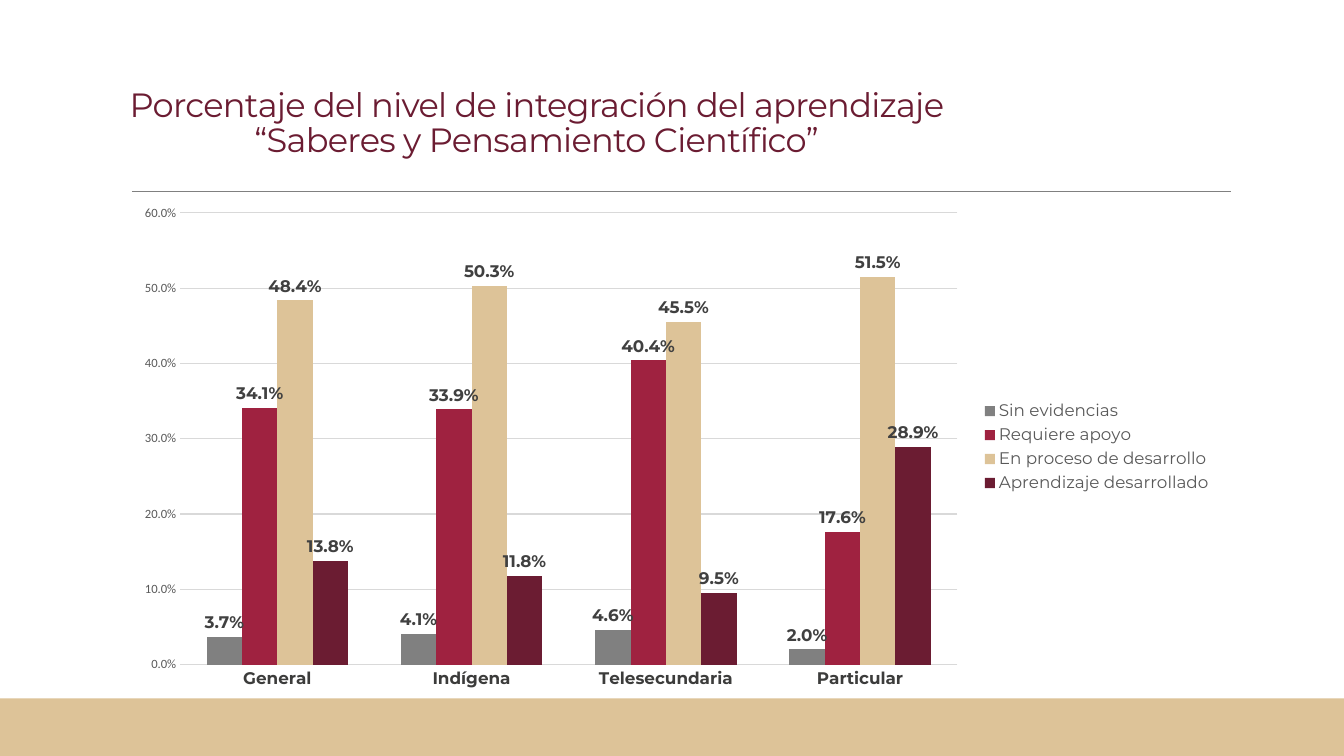
"""Build the slide on learning integration levels by school type."""
from lxml import etree
from pptx import Presentation
from pptx.chart.data import CategoryChartData
from pptx.dml.color import RGBColor
from pptx.enum.chart import XL_CHART_TYPE as ChartType
from pptx.enum.chart import XL_LABEL_POSITION as LabelPosition
from pptx.enum.chart import XL_LEGEND_POSITION as LegendPosition
from pptx.enum.chart import XL_TICK_MARK as TickMark
from pptx.enum.shapes import MSO_CONNECTOR as Connector
from pptx.enum.shapes import MSO_SHAPE as Shape
from pptx.enum.text import MSO_ANCHOR as Anchor
from pptx.enum.text import MSO_AUTO_SIZE as AutoSize
from pptx.enum.text import PP_ALIGN as Align
from pptx.oxml.ns import qn
from pptx.util import Pt

COLORS = {
    "gray": "808080",
    "red": "9F2240",
    "sand": "DDC398",
    "wine": "6B1C32",
    "grid": "D9D9D9",
    "muted": "595959",
    "label": "404040",
    "category": "3C3C3B",
}
SERIES = [
    ("Sin evidencias", "gray", (0.037, 0.041, 0.046, 0.02)),
    ("Requiere apoyo", "red", (0.341, 0.339, 0.404, 0.176)),
    ("En proceso de desarrollo", "sand", (0.484, 0.503, 0.455, 0.515)),
    ("Aprendizaje desarrollado", "wine", (0.138, 0.118, 0.095, 0.289)),
]
PERCENT = "0.0%"


def color(name):
    return RGBColor.from_string(COLORS[name])


def format_font(font, color_name, **values):
    font.color.rgb = color(color_name)
    for attribute, value in values.items():
        setattr(font, attribute, value)


presentation = Presentation()
presentation.slide_width = Pt(960)
presentation.slide_height = Pt(540)
slide = presentation.slides.add_slide(presentation.slide_layouts[5])

rule = slide.shapes.add_connector(Connector.STRAIGHT, Pt(94.3), Pt(136.8), Pt(879), Pt(136.8))
rule.line.color.rgb = color("gray")
rule.line.width = Pt(0.5)
etree.SubElement(rule._element.spPr, qn("a:effectLst"))

footer_band = slide.shapes.add_shape(Shape.RECTANGLE, Pt(0), Pt(498.8), Pt(960), Pt(41.2))
footer_band.shadow.inherit = False
footer_band.fill.solid()
footer_band.fill.fore_color.rgb = color("sand")
footer_band.line.fill.background()

title = slide.shapes.title
title_box = {"left": Pt(74.2), "top": Pt(41), "width": Pt(617.8), "height": Pt(76.3)}
for attribute, value in title_box.items():
    setattr(title, attribute, value)
title.text_frame.word_wrap = True
title.text_frame.auto_size = AutoSize.NONE
title.text_frame.vertical_anchor = Anchor.BOTTOM
paragraph = title.text_frame.paragraphs[0]
paragraph.alignment = Align.CENTER
paragraph.line_spacing = 0.85
run = paragraph.add_run()
run.text = "Porcentaje del nivel de integración del aprendizaje “Saberes y Pensamiento Científico”"
format_font(run.font, "wine", name="Montserrat", size=Pt(24))
run._r.get_or_add_rPr().set("spc", "-50")

chart_data = CategoryChartData(number_format=PERCENT)
chart_data.categories = ["General", "Indígena", "Telesecundaria", "Particular"]
for name, _, values in SERIES:
    chart_data.add_series(name, values)
chart = slide.shapes.add_chart(
    ChartType.COLUMN_CLUSTERED, Pt(87.8), Pt(139.7), Pt(785.5), Pt(359.3), chart_data
).chart
chart.has_title = False
chart.font.name = "Calibri"
chart.font.size = Pt(10)

chart.has_legend = True
chart.legend.position = LegendPosition.RIGHT
chart.legend.include_in_layout = False
format_font(chart.legend.font, "muted", name="Montserrat", size=Pt(12))

for axis in (chart.category_axis, chart.value_axis):
    axis.major_tick_mark = TickMark.NONE
    axis.minor_tick_mark = TickMark.NONE
    axis.format.line.fill.background()
format_font(
    chart.category_axis.tick_labels.font, "category", name="Montserrat", size=Pt(12), bold=True
)
value_axis = chart.value_axis
value_axis.minimum_scale = 0
value_axis.maximum_scale = 0.6
value_axis.major_unit = 0.1
value_axis.major_gridlines.format.line.color.rgb = color("grid")
value_axis.major_gridlines.format.line.width = Pt(0.75)
value_axis.tick_labels.number_format = PERCENT
value_axis.tick_labels.number_format_is_linked = False
format_font(value_axis.tick_labels.font, "muted", name="Calibri", size=Pt(9))

plot = chart.plots[0]
plot.gap_width = 150
plot.overlap = 0
plot.vary_by_categories = False
for series, (_, color_name, _) in zip(plot.series, SERIES):
    series.format.fill.solid()
    series.format.fill.fore_color.rgb = color(color_name)
    labels = series.data_labels
    label_format = {
        "show_value": True,
        "number_format": PERCENT,
        "number_format_is_linked": False,
        "position": LabelPosition.OUTSIDE_END,
    }
    for attribute, value in label_format.items():
        setattr(labels, attribute, value)
    format_font(labels.font, "label", name="Montserrat", size=Pt(12), bold=True)

presentation.save("out.pptx")
